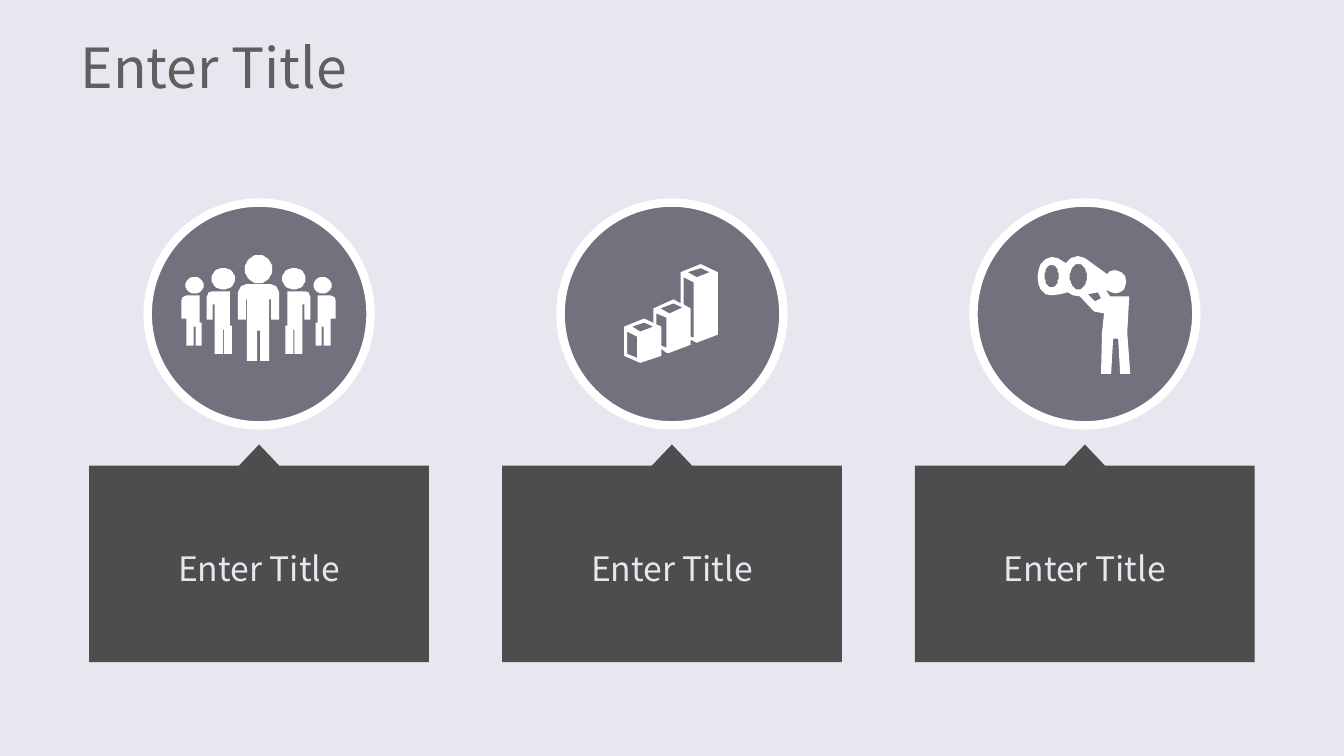
from math import cos, pi, sin

from pptx import Presentation
from pptx.dml.color import RGBColor
from pptx.enum.shapes import MSO_SHAPE as Shape
from pptx.enum.text import MSO_ANCHOR as Anchor, PP_ALIGN as Align
from pptx.util import Inches, Pt

COLORS = {name: RGBColor.from_string(value) for name, value in {
    "background": "E7E7EF", "disc": "74707E", "card": "4D4D4D",
    "title": "5F5F5F", "white": "FFFFFF"}.items()}
FONT = "Noto Sans CJK JP"

# Column grid and row heights, in inches
FIRST_CENTER, PITCH = 2.57, 4.095
DISC_TOP, DISC_SIZE = 2.01, 2.21
POINTER_TOP, POINTER_WIDTH, POINTER_HEIGHT = 4.41, 0.57, 0.3
CARD_TOP, CARD_WIDTH, CARD_HEIGHT = 4.62, 3.37, 1.95


def oval(x, y, radius_x, radius_y):
    """Outline points of an ellipse around x, y."""
    return [(x + radius_x * cos(step * pi / 24), y + radius_y * sin(step * pi / 24))
            for step in range(48)]


def add_filled(kind, left, top, width, height, color):
    shape = page.shapes.add_shape(
        kind, Inches(left), Inches(top), Inches(width), Inches(height))
    shape.shadow.inherit = False
    shape.fill.solid()
    shape.fill.fore_color.rgb = COLORS[color]
    shape.line.fill.background()
    return shape


# Icon outlines, in hundredths of an inch from the icon's top left corner
TEAM_WIDTH = 153
left_team = [
    [(20, 67), (20, 90), (14, 90), (14, 71), (12, 71), (12, 90), (5, 90), (5, 63),
     (0, 63), (0, 45), (1, 42), (5, 40), (18, 40), (18, 67)],
    oval(13, 30, 9, 8.5),
    [(50, 70), (50, 98), (42, 98), (42, 74), (41, 74), (41, 98), (33, 98), (33, 49),
     (31, 49), (31, 64), (25, 64), (25, 42), (27, 37), (31, 36), (48, 36), (48, 70)],
    oval(41.5, 23.5, 11.5, 10.5),
]
right_team = [[(TEAM_WIDTH - x, y) for x, y in outline] for outline in left_team]
leader = [
    [(89, 64), (89, 44), (87, 44), (87, 105), (78, 105), (78, 75), (75, 75),
     (75, 105), (65, 105), (65, 44), (64, 44), (64, 64), (56, 64), (56, 37),
     (59, 31), (64, 29), (89, 29), (94, 31), (97, 37), (97, 64)],
    oval(76.5, 14, 13.5, 14),
]
bars = [
    [(29, 44), (49, 35), (56, 39), (56, 8), (76, 0), (93, 8), (93, 70), (72, 78),
     (66, 75), (66, 80), (45, 88), (42, 88), (37, 84), (37, 91), (16, 98), (0, 91),
     (0, 62), (20, 54), (37, 62), (37, 81), (42, 83), (42, 53), (32, 49), (32, 59),
     (29, 59)],
    [(63, 8), (72, 13), (85, 8), (76, 4)],
    [(36, 44), (45, 49), (58, 43), (49, 39)],
    [(8, 62), (16, 67), (29, 62), (20, 58)],
    [(13, 72), (3, 67), (3, 89), (13, 93)],
    [(59, 40), (66, 44), (66, 72), (69, 73), (69, 18), (59, 13)],
]
lookout = [
    [(40, 0), (33, 2), (28, 7), (20, 2), (14, 1), (8, 3), (3, 8), (1, 14), (0, 21),
     (1, 28), (3, 33), (8, 38), (14, 39), (22, 38), (30, 36), (35, 39), (42, 40),
     (56, 55), (66, 57), (64, 76), (63, 117), (73, 117), (75, 82), (80, 82),
     (82, 117), (92, 117), (89, 76), (91, 40), (72, 40), (68, 34), (69, 34),
     (73, 36), (77, 37), (82, 36), (86, 33), (88, 26), (87, 20), (83, 16), (77, 14),
     (72, 15), (69, 18), (47, 2)],
    [(63, 42), (57, 45), (50, 38), (60, 36)],
    oval(14, 20, 7, 11),
    oval(40.5, 20.5, 8.5, 12.5),
]

# Deck and page
deck = Presentation()
deck.slide_width, deck.slide_height = Inches(13.33), Inches(7.5)
page = deck.slides.add_slide(deck.slide_layouts[6])
page.background.fill.solid()
page.background.fill.fore_color.rgb = COLORS["background"]

# Three columns: disc, card, pointer and icon
columns = [
    ("Enter Title", left_team + leader + right_team, 1.8, 2.53),
    ("Enter Title", bars, 6.19, 2.62),
    ("Enter Title", lookout, 10.29, 2.54),
]
for index, (label, outlines, icon_left, icon_top) in enumerate(columns):
    center = FIRST_CENTER + index * PITCH

    disc = add_filled(Shape.OVAL, center - DISC_SIZE / 2, DISC_TOP,
                      DISC_SIZE, DISC_SIZE, "disc")
    disc.line.color.rgb = COLORS["white"]
    disc.line.width = Pt(6)

    card = add_filled(Shape.RECTANGLE, center - CARD_WIDTH / 2, CARD_TOP,
                      CARD_WIDTH, CARD_HEIGHT, "card")
    card.text_frame.vertical_anchor = Anchor.MIDDLE
    para = card.text_frame.paragraphs[0]
    para.text = label
    para.alignment = Align.CENTER
    para.line_spacing = 1.2
    para.font.name, para.font.size = FONT, Pt(24)
    para.font.color.rgb = COLORS["background"]

    add_filled(Shape.ISOSCELES_TRIANGLE, center - POINTER_WIDTH / 2, POINTER_TOP,
               POINTER_WIDTH, POINTER_HEIGHT, "card")

    builder = page.shapes.build_freeform(*outlines[0][0], scale=Inches(0.01))
    for number, outline in enumerate(outlines):
        if number:
            builder.move_to(*outline[0])
        builder.add_line_segments(outline[1:], close=True)
    icon = builder.convert_to_shape(Inches(icon_left), Inches(icon_top))
    icon.shadow.inherit = False
    icon.fill.solid()
    icon.fill.fore_color.rgb = COLORS["white"]
    icon.line.fill.background()

# Page title
box = page.shapes.add_textbox(Inches(0.67), Inches(0.3), Inches(12), Inches(0.72))
frame = box.text_frame
frame.word_wrap = True
frame.vertical_anchor = Anchor.MIDDLE
frame.margin_left = frame.margin_right = Inches(0.13)
frame.margin_top = frame.margin_bottom = Inches(0.07)
para = frame.paragraphs[0]
para.text = "Enter Title"
para.font.name, para.font.size = FONT, Pt(39.5)
para.font.color.rgb = COLORS["title"]

deck.save("out.pptx")
